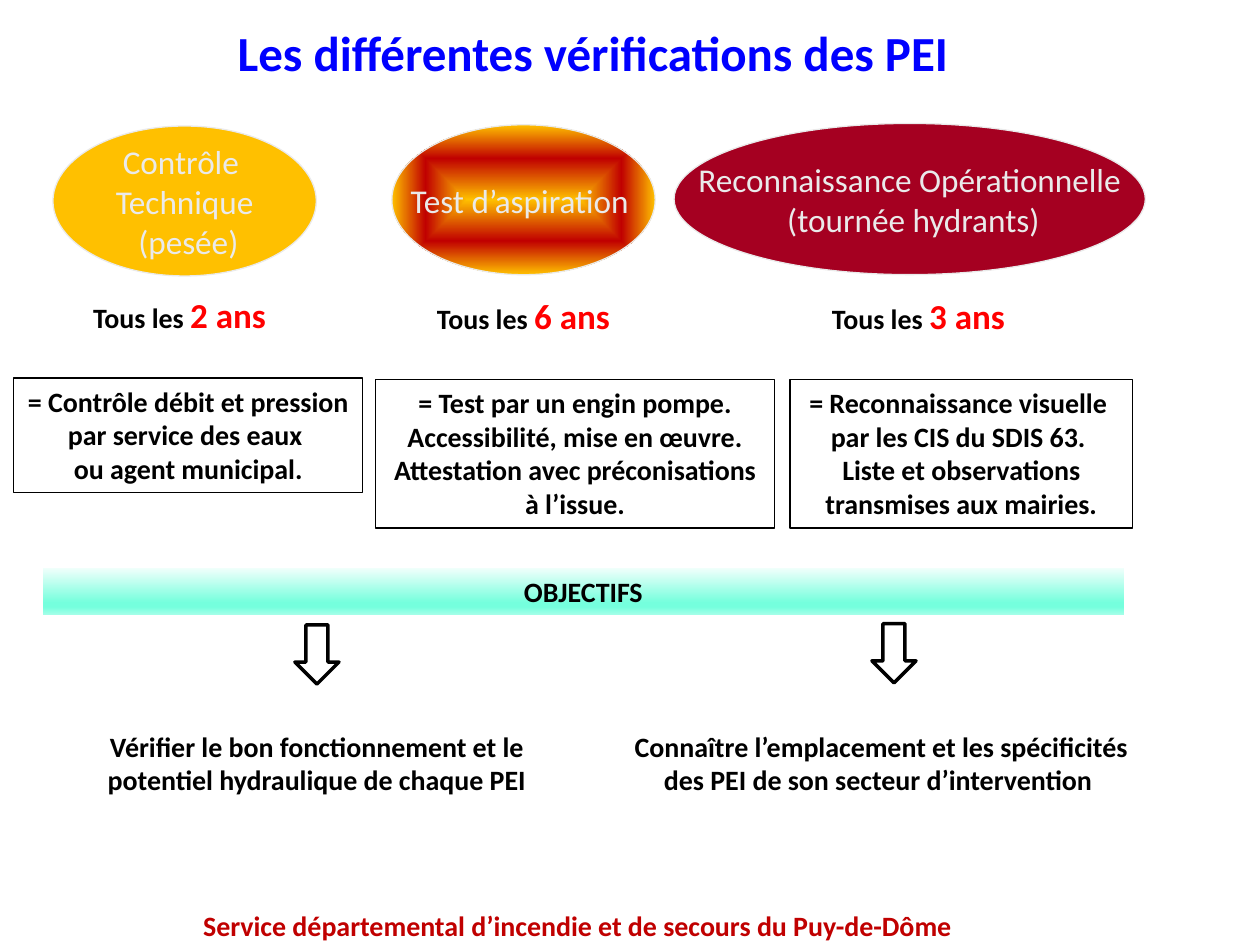
from dataclasses import dataclass

from lxml.etree import SubElement
from pptx import Presentation
from pptx.dml.color import RGBColor
from pptx.enum.shapes import MSO_SHAPE
from pptx.enum.text import MSO_ANCHOR, MSO_AUTO_SIZE, PP_ALIGN
from pptx.oxml.ns import qn
from pptx.util import Inches, Pt

BLACK, RED, PALE = "000000", "FF0000", "EAEAEA"
FLAME = ((0, "FFC000"), (55, "C00000"), (100, "FFC000"))
AQUA = ((0, "F0FFFB"), (74, "75FFDD"), (83, "75FFDD"), (100, "A3FFE8"))


@dataclass(frozen=True)
class Box:
    left: float
    top: float
    width: float
    height: float

    def emu(self) -> tuple:
        return tuple(Inches(v) for v in (self.left, self.top, self.width, self.height))


@dataclass(frozen=True)
class Check:
    name: str
    oval: Box
    fill: str | None
    period: str
    period_box: Box
    details: str
    details_box: Box


@dataclass(frozen=True)
class Goal:
    text: str
    box: Box
    arrow: Box


CHECKS = [
    Check("Contrôle \nTechnique\n (pesée)", Box(0.42, 1, 2.09, 1.19), "FFC000",
          "2 ans", Box(0.38, 2.28, 2.09, 0.44),
          "= Contrôle débit et pression \npar service des eaux \nou agent municipal.",
          Box(0.11, 3, 2.77, 0.91)),
    Check("Test d’aspiration ", Box(3.11, 0.99, 2.09, 1.19), None,
          "6 ans", Box(3.11, 2.29, 2.09, 0.44),
          "= Test par un engin pompe. Accessibilité, mise en œuvre.\n"
          "Attestation avec préconisations à l’issue.",
          Box(2.98, 3.01, 3.17, 1.18)),
    Check("Reconnaissance Opérationnelle\n (tournée hydrants)",
          Box(5.35, 0.98, 3.74, 1.2), "A50021",
          "3 ans", Box(5.43, 2.29, 3.72, 0.44),
          "= Reconnaissance visuelle \npar les CIS du SDIS 63. \n"
          "Liste et observations transmises aux mairies.",
          Box(6.27, 3.01, 2.72, 1.18)),
]

GOALS = [
    Goal("Vérifier le bon fonctionnement et le potentiel hydraulique de chaque PEI",
         Box(0.47, 5.74, 4.09, 0.64), Box(2.34, 4.96, 0.35, 0.47)),
    Goal("Connaître l’emplacement et les spécificités des PEI de son secteur d’intervention ",
         Box(4.84, 5.74, 4.31, 0.64), Box(6.92, 4.95, 0.35, 0.47)),
]


def rgb(value: str) -> RGBColor:
    return RGBColor.from_string(value)


def add_run(p, text: str, size: float, color: str, bold: bool) -> None:
    r = p.add_run()
    r.text = text
    r.font.name = "Calibri"
    r.font.size = Pt(size)
    r.font.bold = bold
    r.font.color.rgb = rgb(color)


def write(sp, text: str, *, size: float = 16, color: str = BLACK, bold: bool = True,
          accent: str = "", oval: bool = False) -> None:
    tf = sp.text_frame
    tf.word_wrap = not oval
    tf.auto_size = MSO_AUTO_SIZE.NONE if oval else MSO_AUTO_SIZE.SHAPE_TO_FIT_TEXT
    tf.vertical_anchor = MSO_ANCHOR.MIDDLE if oval else MSO_ANCHOR.TOP
    for i, line in enumerate(text.split("\n")):
        p = tf.add_paragraph() if i else tf.paragraphs[0]
        p.alignment = PP_ALIGN.CENTER
        add_run(p, line, size, color, bold)
    if accent:
        add_run(p, accent, 20, RED, bold)


def add_label(s, box: Box, text: str, **style) -> None:
    write(s.shapes.add_textbox(*box.emu()), text, **style)


def add_figure(s, kind: MSO_SHAPE, box: Box, *, fill: str | None = None,
               line: str | None = None, width: float = 0.75):
    sp = s.shapes.add_shape(kind, *box.emu())
    sp.shadow.inherit = False
    if fill:
        sp.fill.solid()
        sp.fill.fore_color.rgb = rgb(fill)
    else:
        sp.fill.background()
    if line:
        sp.line.color.rgb = rgb(line)
        sp.line.width = Pt(width)
    else:
        sp.line.fill.background()
    return sp


def set_gradient(sp, stops: tuple, *, centered: bool = False) -> None:
    sp.fill.gradient()
    grad = sp.element.spPr.find(qn("a:gradFill"))
    for child in list(grad):
        grad.remove(child)
    stop_list = SubElement(grad, qn("a:gsLst"))
    for percent, color in stops:
        stop = SubElement(stop_list, qn("a:gs"), pos=str(percent * 1000))
        SubElement(stop, qn("a:srgbClr"), val=color)
    if centered:
        shade = SubElement(grad, qn("a:path"), path="rect")
        SubElement(shade, qn("a:fillToRect"), {side: "50000" for side in "ltrb"})
    else:
        SubElement(grad, qn("a:lin"), ang="5400000", scaled="0")


def add_check(s, check: Check) -> None:
    sp = add_figure(s, MSO_SHAPE.OVAL, check.oval, fill=check.fill, line=PALE)
    if check.fill is None:
        set_gradient(sp, FLAME, centered=True)
    write(sp, check.name, size=19, color=PALE, bold=False, oval=True)
    add_label(s, check.period_box, "Tous les ", accent=check.period)
    write(add_figure(s, MSO_SHAPE.RECTANGLE, check.details_box, line=BLACK), check.details)


def add_goal(s, goal: Goal) -> None:
    add_figure(s, MSO_SHAPE.DOWN_ARROW, goal.arrow, fill="FFFFFF", line=BLACK, width=2)
    add_label(s, goal.box, goal.text)


def main() -> None:
    prs = Presentation()
    prs.slide_width, prs.slide_height = Inches(10), Inches(7.5)
    s = prs.slides.add_slide(prs.slide_layouts[6])
    add_label(s, Box(1.04, 0.13, 7.33, 0.57), "Les différentes vérifications des PEI",
              size=28, color="0000FF")
    for check in CHECKS:
        add_check(s, check)
    banner = add_figure(s, MSO_SHAPE.RECTANGLE, Box(0.34, 4.51, 8.58, 0.37))
    set_gradient(banner, AQUA)
    write(banner, "OBJECTIFS")
    for goal in GOALS:
        add_goal(s, goal)
    add_label(s, Box(0, 7.16, 9.17, 0.37),
              "Service départemental d’incendie et de secours du Puy-de-Dôme", color="C00000")
    prs.save("out.pptx")


if __name__ == "__main__":
    main()
